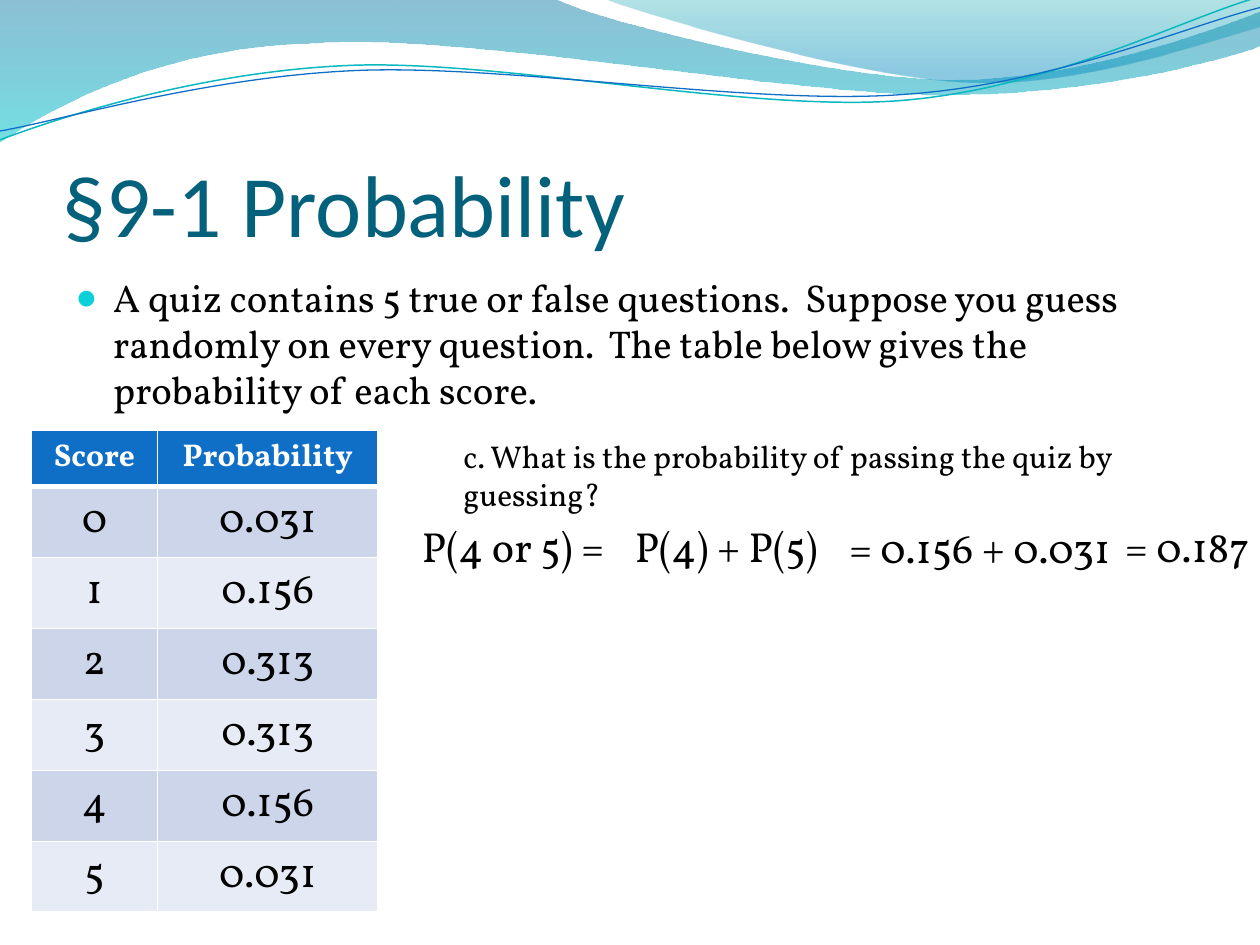
from lxml import etree
from pptx import Presentation
from pptx import util as u
from pptx.dml.color import RGBColor
from pptx.enum import text
from pptx.oxml import parse_xml
from pptx.oxml.ns import nsdecls, qn

Cm = u.Cm
WHITE = RGBColor(0xFF, 0xFF, 0xFF)
BLACK = RGBColor(0, 0, 0)
TITLE = RGBColor(0x04, 0x61, 0x7B)
HEADER = RGBColor(0x0F, 0x6F, 0xC6)
BANDS = RGBColor(0xCC, 0xD5, 0xEA), RGBColor(0xE7, 0xEB, 0xF5)
TEAL = RGBColor(0x0A, 0xB8, 0xBF)
BULLET = RGBColor(0x0B, 0xD0, 0xD9)
WAVE = (0, RGBColor(0, 0x74, 0xA1), 45), (1, RGBColor(0, 0xC6, 0xCF), 55)
CREST = (0, RGBColor(0, 0xA1, 0xA9), 30), (0.8, RGBColor(0, 0x8B, 0xBF), 45)
SERIF = "Vollkorn"

WAVE_PATH = [(0, 0), (4.4, -0.01), (4.76, 0.17, 6.64, 0.63, 7.58, 0.63),
             (8.53, 0.63, 9.58, 0.26, 10, 0.09), (10.01, 0.36),
             (9.83, 0.44, 8.7, 0.76, 7.46, 0.75), (6.22, 0.75, 3.82, 0.28, 2.57, 0.34),
             (1.29, 0.36, 0.46, 0.83, -0.01, 1.13), (0, 0)]
CREST_PATH = [(4.79, -0.01), (5.09, 0.11, 6.82, 0.62, 7.69, 0.65),
              (8.56, 0.69, 9.61, 0.32, 10, 0.21), (10, 0), (4.79, -0.01)]
TEAL_PATH = [(0, 1.11), (0.48, 0.93, 1.58, 0.57, 2.77, 0.52),
             (3.95, 0.47, 5.93, 0.89, 7.13, 0.8), (8.33, 0.71, 9.38, 0.15, 9.98, -0.02)]
BLUE_PATH = [(0, 1.04), (0.47, 0.96, 1.64, 0.61, 2.83, 0.56),
             (4.03, 0.51, 5.97, 0.84, 7.17, 0.75), (8.36, 0.67, 9.41, 0.21, 10, 0.06)]
SCORES = ["0.031", "0.156", "0.313", "0.313", "0.156", "0.031"]


def inch(value):
    """Convert inches to a Cm length."""
    return Cm(value * 2.54)


def add_curve(s, path, closed):
    """Add a freeform whose six-number segments are cubic Bezier curves."""
    pts = [(inch(seg[i]), inch(seg[i + 1])) for seg in path for i in range(0, len(seg), 2)]
    fb = s.shapes.build_freeform(*pts[0])
    fb.add_line_segments(pts[1:], close=closed)
    sp = fb.convert_to_shape()
    sp.shadow.inherit = False
    lines = iter(list(sp._element.iter(qn("a:lnTo"))))
    for seg in path[1:]:
        first = next(lines)
        if len(seg) == 6:
            first.tag = qn("a:cubicBezTo")
            for _ in range(2):
                ln = next(lines)
                first.append(ln[0])
                ln.getparent().remove(ln)
    return sp


def add_wave(s, path, stops):
    """Add a closed wave with a translucent downward gradient."""
    sp = add_curve(s, path, True)
    sp.line.fill.background()
    sp.fill.gradient()
    sp.fill.gradient_angle = 270
    for stop, (pos, color, _) in zip(sp.fill.gradient_stops, stops):
        stop.position = pos
        stop.color.rgb = color
    for clr, (_, _, alpha) in zip(sp._element.spPr.iter(qn("a:srgbClr")), stops):
        etree.SubElement(clr, qn("a:alpha")).set("val", str(alpha * 1000))


def add_stroke(s, path, color, width):
    """Add an open curved line."""
    sp = add_curve(s, path, False)
    sp.fill.background()
    sp.line.color.rgb = color
    sp.line.width = u.Pt(width)


def style(p, size, color=BLACK, name=SERIF, bold=False):
    """Set the font of a paragraph."""
    f = p.font
    f.size, f.name, f.bold = u.Pt(size), name, bold
    f.color.rgb = color


def add_text(s, words, x, y, w, h, size, **font):
    """Add a wrapping text box and return its text frame."""
    tf = s.shapes.add_textbox(inch(x), inch(y), inch(w), inch(h)).text_frame
    tf.word_wrap = True
    p = tf.paragraphs[0]
    p.text = words
    style(p, size, **font)
    return tf


def add_title(s, words):
    """Add the bottom-anchored title."""
    tf = add_text(s, words, 0.5, 0.77, 9, 1.25, 50, color=TITLE, name="Calibri")
    tf.vertical_anchor = text.MSO_ANCHOR.BOTTOM
    tf.margin_left = tf.margin_right = tf.margin_bottom = 0


def add_bullet(s, words):
    """Add the bulleted problem statement."""
    p = add_text(s, words, 0.5, 2.12, 9, 1.05, 22.1).paragraphs[0]
    p.space_before = u.Pt(4)
    pPr = p._p.get_or_add_pPr()
    pPr.set("marL", str(inch(0.3)))
    pPr.set("indent", str(-inch(0.3)))
    bullet = (f'<a:buClr {{0}}><a:srgbClr val="{BULLET}"/></a:buClr>',
              '<a:buSzPct {0} val="95000"/>',
              '<a:buFont {0} typeface="Arial"/>', '<a:buChar {0} char="●"/>')
    for xml in bullet:
        pPr.insert_element_before(parse_xml(xml.format(nsdecls("a"))), "a:tabLst", "a:defRPr")


def set_borders(cell, bottom):
    """Draw white borders round a cell."""
    tcPr = cell._tc.get_or_add_tcPr()
    for i, (side, width) in enumerate(zip("LRTB", (1, 1, 1, bottom))):
        tcPr.insert(i, parse_xml(
            f'<a:ln{side} {nsdecls("a")} w="{u.Pt(width)}"><a:solidFill>'
            f'<a:srgbClr val="{WHITE}"/></a:solidFill></a:ln{side}>'))


def add_scores(s):
    """Add the table of scores and probabilities."""
    rows = [("Score", "Probability")] + [(str(i), v) for i, v in enumerate(SCORES)]
    tbl = s.shapes.add_table(len(rows), 2, inch(0.25), Cm(8.68), inch(2.75), Cm(9.74)).table
    tbl.columns[0].width, tbl.columns[1].width = inch(1), inch(1.75)
    for i, row in enumerate(rows):
        head = i == 0
        tbl.rows[i].height = Cm(1.13) if head else Cm(1.43)
        for j, words in enumerate(row):
            cell = tbl.cell(i, j)
            cell.fill.solid()
            cell.fill.fore_color.rgb = HEADER if head else BANDS[(i - 1) % 2]
            p = cell.text_frame.paragraphs[0]
            p.text = words
            p.alignment = text.PP_ALIGN.CENTER
            style(p, 18 if head else 24, WHITE if head else BLACK, bold=head)
            set_borders(cell, 3 if head else 1)


def main():
    """Build and save the slide."""
    prs = Presentation()
    prs.slide_width, prs.slide_height = inch(10), inch(7.5)
    s = prs.slides.add_slide(prs.slide_layouts[6])
    add_wave(s, WAVE_PATH, WAVE)
    add_wave(s, CREST_PATH, CREST)
    add_stroke(s, TEAL_PATH, TEAL, 0.85)
    add_stroke(s, BLUE_PATH, HEADER, 0.75)
    add_title(s, "§9-1 Probability")
    add_bullet(s, "A quiz contains 5 true or false questions.  Suppose you guess randomly "
                  "on every question.  The table below gives the probability of each score.")
    add_scores(s)
    add_text(s, "c. What is the probability of passing the quiz by guessing?",
             3.58, 3.42, 6.42, 0.4, 18)
    for words, x, y, w in (("P(4 or 5) =", 3.25, 4.08, 2.58), ("P(4) + P(5)", 4.94, 4.08, 3.31),
                           ("= 0.156 + 0.031", 6.64, 4.09, 2.36), ("= 0.187", 8.83, 4.08, 1.42)):
        add_text(s, words, x, y, w, 0.5, 24)
    prs.save("out.pptx")


if __name__ == "__main__":
    main()
